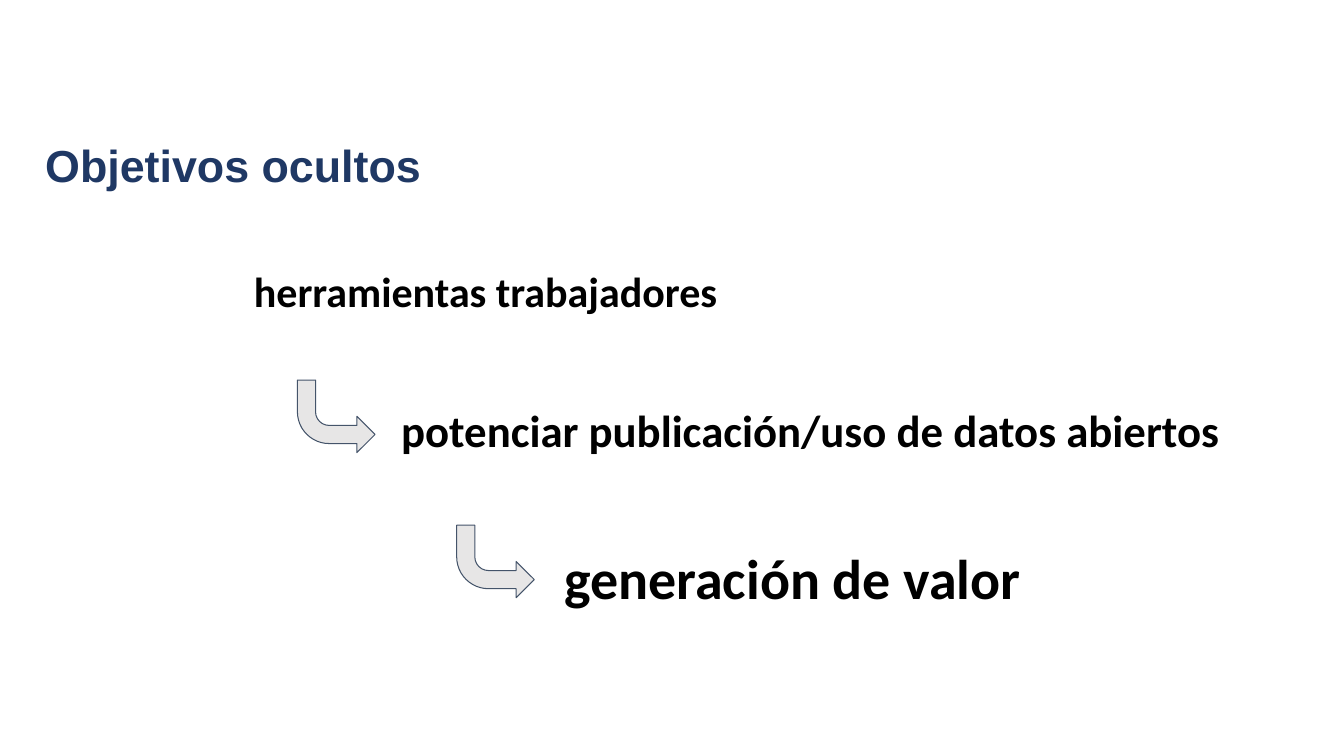
from pptx import Presentation
from pptx.dml.color import RGBColor
from pptx.enum.shapes import MSO_SHAPE
from pptx.enum.text import MSO_ANCHOR, PP_ALIGN
from pptx.util import Inches, Pt

BENT_ARROW = MSO_SHAPE.BENT_ARROW
TOP, MIDDLE = MSO_ANCHOR.TOP, MSO_ANCHOR.MIDDLE
LEFT, JUSTIFY = PP_ALIGN.LEFT, PP_ALIGN.JUSTIFY

NAVY = RGBColor(0x1F, 0x38, 0x64)
BLACK = RGBColor(0x00, 0x00, 0x00)
LIGHT_GRAY = RGBColor(0xE7, 0xE6, 0xE6)
SLATE = RGBColor(0x44, 0x54, 0x6A)


def add_text(page, bounds, text, size, font="Calibri", color=BLACK,
             align=LEFT, anchor=TOP, inset=0.1, spacing=None):
    box = page.shapes.add_textbox(*map(Inches, bounds))
    frame = box.text_frame
    frame.word_wrap = True
    frame.vertical_anchor = anchor
    frame.margin_left = frame.margin_right = Inches(0.1)
    frame.margin_top = frame.margin_bottom = Inches(inset)
    para = frame.paragraphs[0]
    para.text = text
    para.alignment = align
    para.line_spacing = spacing
    para.font.name = font
    para.font.size = Pt(size)
    para.font.bold = True
    para.font.color.rgb = color


def add_step_arrow(page, left, top):
    """Arrow that goes down and then turns right."""
    arrow = page.shapes.add_shape(
        BENT_ARROW, Inches(left), Inches(top), Inches(0.77), Inches(0.72))
    arrow.shadow.inherit = False
    arrow.adjustments[3] = 0.438
    arrow.rotation = 180
    arrow._element.spPr.xfrm.set("flipH", "1")
    arrow.fill.solid()
    arrow.fill.fore_color.rgb = LIGHT_GRAY
    arrow.line.color.rgb = SLATE
    arrow.line.width = Pt(0.75)


def main():
    deck = Presentation()
    deck.slide_width, deck.slide_height = Inches(13.33), Inches(7.5)
    page = deck.slides.add_slide(deck.slide_layouts[6])

    # Title
    add_text(page, (0.35, 1.5, 12.33, 0.33), "Objetivos ocultos", 32,
             font="Arial", color=NAVY, anchor=MIDDLE, inset=0.05, spacing=0.9)

    # Steps, each larger and further right
    add_text(page, (2.42, 2.53, 6.33, 0.83), "herramientas trabajadores", 30)
    add_text(page, (3.88, 3.89, 8.57, 0.98),
             "potenciar publicación/uso de datos abiertos", 32, align=JUSTIFY)
    add_text(page, (5.5, 5.29, 5.75, 0.98), "generación de valor", 40,
             align=JUSTIFY)

    # Arrows between the steps
    for left, top in ((2.95, 3.77), (4.53, 5.21)):
        add_step_arrow(page, left, top)

    deck.save("out.pptx")


if __name__ == "__main__":
    main()
